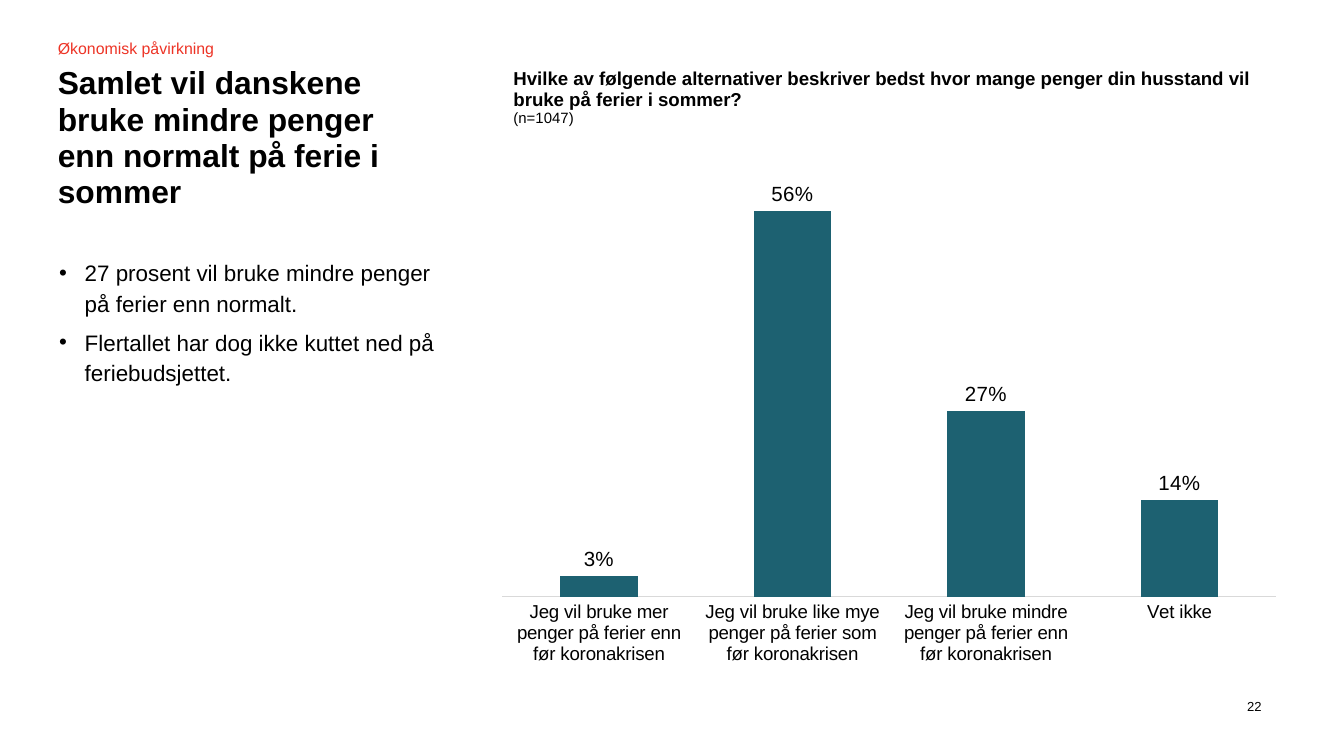
"""Build a slide on Danish holiday spending with a column chart."""
from lxml import etree
from pptx import Presentation
from pptx.chart.data import CategoryChartData
from pptx.dml.color import RGBColor
from pptx.enum.chart import XL_CHART_TYPE, XL_LABEL_POSITION, XL_TICK_MARK
from pptx.enum.text import MSO_ANCHOR, MSO_AUTO_SIZE, PP_ALIGN
from pptx.oxml import parse_xml
from pptx.oxml.ns import nsdecls, qn
from pptx.util import Inches, Pt

COLUMNS = XL_CHART_TYPE.COLUMN_CLUSTERED
OUTSIDE = XL_LABEL_POSITION.OUTSIDE_END
NO_TICK = XL_TICK_MARK.NONE
TOP = MSO_ANCHOR.TOP
NO_FIT = MSO_AUTO_SIZE.NONE
LEFT = PP_ALIGN.LEFT

FONT = "Arial"
BLACK = RGBColor(0, 0, 0)
WHITE = RGBColor(0xFF, 0xFF, 0xFF)
RED = RGBColor(0xED, 0x34, 0x26)
TEAL = RGBColor(0x1D, 0x61, 0x71)
GREY = RGBColor(0xD9, 0xD9, 0xD9)

KICKER = "Økonomisk påvirkning"
TITLE = "Samlet vil danskene bruke mindre penger enn normalt på ferie i sommer"
BULLETS = [
    "27 prosent vil bruke mindre penger på ferier enn normalt.",
    "Flertallet har dog ikke kuttet ned på feriebudsjettet.",
]
QUESTION = [
    ("Hvilke av følgende alternativer beskriver bedst hvor mange penger "
     "din husstand vil bruke på ferier i sommer?", 10, True),
    ("(n=1047)", 8, False),
]
ANSWERS = [
    ("Jeg vil bruke mer penger på ferier enn før koronakrisen", 0.03),
    ("Jeg vil bruke like mye penger på ferier som før koronakrisen", 0.56),
    ("Jeg vil bruke mindre penger på ferier enn før koronakrisen", 0.27),
    ("Vet ikke", 0.14),
]
PAGE = "22"
PLOT = {"x": 0.021, "y": 0.038, "w": 0.952, "h": 0.76}


def style(font, size, color=BLACK, bold=False):
    font.name, font.size, font.bold = FONT, Pt(size), bold
    font.color.rgb = color


def add_run(p, text, size, color=BLACK, bold=False):
    p.alignment = LEFT
    p.space_before = Pt(0)
    r = p.add_run()
    r.text = text
    style(r.font, size, color, bold)


def frame(shape, box, wrap=True):
    shape.left, shape.top, shape.width, shape.height = map(Inches, box)
    tf = shape.text_frame
    tf.margin_left = tf.margin_top = tf.margin_right = tf.margin_bottom = 0
    tf.vertical_anchor, tf.auto_size, tf.word_wrap = TOP, NO_FIT, wrap
    return tf


def add_label(s, box, text, size, color=BLACK):
    tf = frame(s.shapes.add_textbox(0, 0, 0, 0), box, False)
    add_run(tf.paragraphs[0], text, size, color)


def add_bullets(tf):
    for i, text in enumerate(BULLETS):
        p = tf.add_paragraph() if i else tf.paragraphs[0]
        pPr = p._p.get_or_add_pPr()
        pPr.set("marL", str(Inches(0.19)))
        pPr.set("indent", str(-Inches(0.19)))
        etree.SubElement(pPr, qn("a:buChar")).set("char", "•")
        add_run(p, text, 12)
        p.line_spacing = 1.15
        p.space_before, p.space_after = Pt(2 if i else 0), Pt(2)


def add_question(s):
    box = map(Inches, (3.82, 0.51, 5.76, 0.55))
    table = s.shapes.add_table(1, 1, *box).table
    table.first_row = table.horz_banding = False
    cell = table.cell(0, 0)
    cell.margin_left = cell.margin_top = cell.margin_right = 0
    cell.margin_bottom = Inches(0.08)
    tcPr = cell._tc.get_or_add_tcPr()
    for side in ("lnL", "lnR", "lnT", "lnB"):
        tcPr.append(parse_xml(
            f'<a:{side} {nsdecls("a")} w="{Pt(1)}"><a:solidFill>'
            f'<a:srgbClr val="{WHITE}"/></a:solidFill></a:{side}>'))
    cell.fill.solid()
    cell.fill.fore_color.rgb = WHITE
    tf = cell.text_frame
    for i, (text, size, bold) in enumerate(QUESTION):
        p = tf.add_paragraph() if i else tf.paragraphs[0]
        add_run(p, text, size, bold=bold)


def add_answers(s):
    data = CategoryChartData(number_format="0%")
    data.categories = [name for name, _ in ANSWERS]
    data.add_series("Series 1", [value for _, value in ANSWERS])
    box = map(Inches, (3.61, 1.21, 6.05, 4.05))
    chart = s.shapes.add_chart(COLUMNS, *box, data).chart
    chart.has_legend = chart.has_title = False
    style(chart.font, 10)

    cat = chart.category_axis
    cat.major_tick_mark = cat.minor_tick_mark = NO_TICK
    cat.format.line.color.rgb = GREY
    cat.format.line.width = Pt(0.75)
    style(cat.tick_labels.font, 10)
    val = chart.value_axis
    val.minimum_scale, val.maximum_scale, val.major_unit = 0, 0.6, 0.2
    val.has_major_gridlines = val.visible = False

    plot = chart.plots[0]
    plot.gap_width, plot.vary_by_categories = 150, False
    fill = plot.series[0].format.fill
    fill.solid()
    fill.fore_color.rgb = TEAL
    plot.has_data_labels = True
    labels = plot.data_labels
    labels.show_value, labels.position = True, OUTSIDE
    labels.number_format, labels.number_format_is_linked = "0%", False
    style(labels.font, 11)

    area = chart._chartSpace.chart.plotArea
    for old in area.findall(qn("c:layout")):
        area.remove(old)
    modes = '<c:xMode val="edge"/><c:yMode val="edge"/>'
    sizes = "".join(f'<c:{k} val="{v}"/>' for k, v in PLOT.items())
    area.insert(0, parse_xml(
        f'<c:layout {nsdecls("c")}><c:manualLayout>'
        f'<c:layoutTarget val="inner"/>{modes}{sizes}'
        '</c:manualLayout></c:layout>'))


def main():
    prs = Presentation()
    prs.slide_width = Inches(10)
    prs.slide_height = prs.slide_width * 9 // 16
    s = prs.slides.add_slide(prs.slide_layouts[1])

    add_label(s, (0.43, 0.29, 1.21, 0.14), KICKER, 8.5, RED)
    p = frame(s.shapes.title, (0.43, 0.49, 2.82, 1.09)).paragraphs[0]
    add_run(p, TITLE, 17, bold=True)
    p.line_spacing = 0.95
    add_bullets(frame(s.placeholders[1], (0.44, 1.9, 2.8, 1.41)))
    add_question(s)
    add_answers(s)
    add_label(s, (9.28, 5.2, 0.28, 0.12), PAGE, 7)
    prs.save("out.pptx")


if __name__ == "__main__":
    main()
